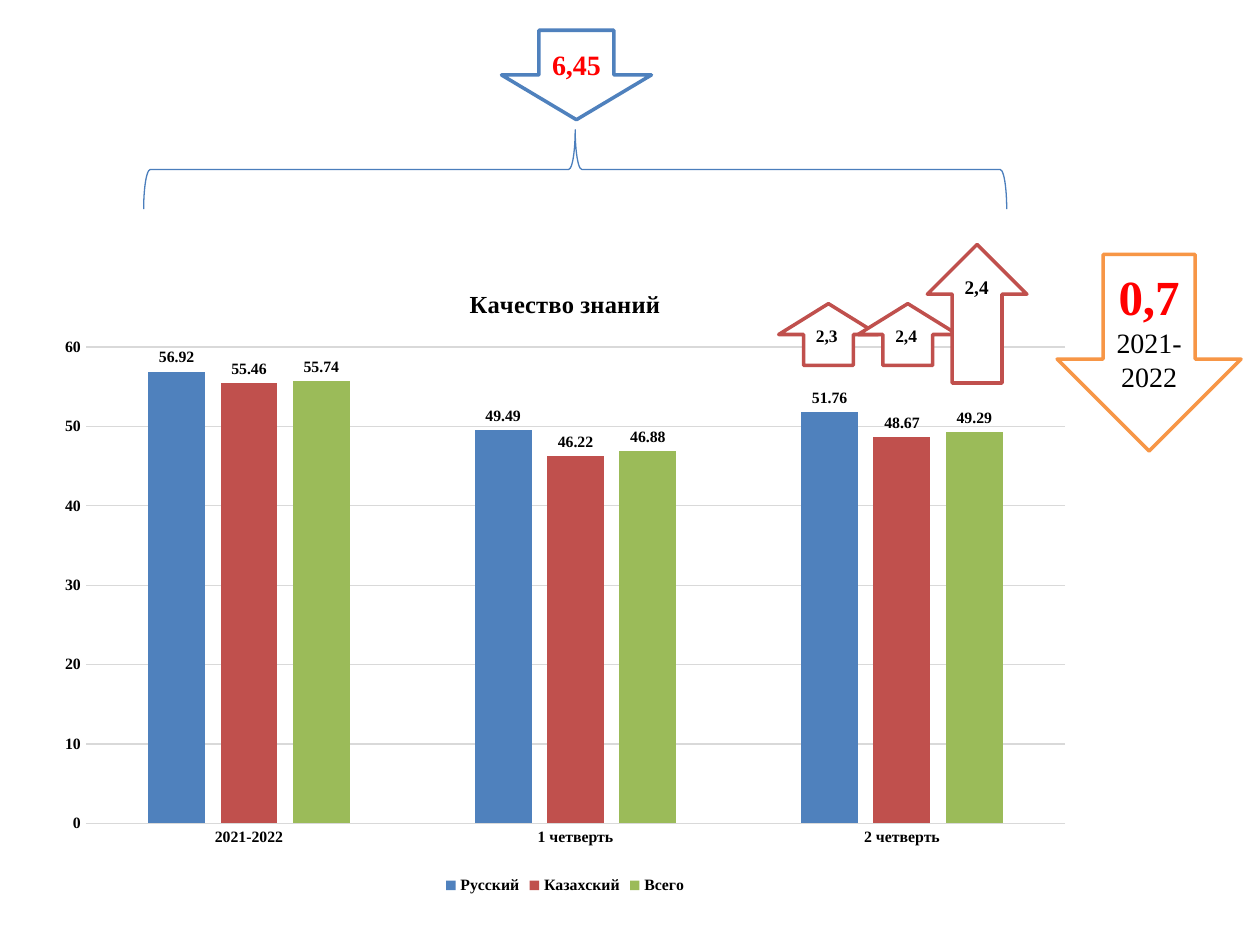
from lxml import etree
from pptx import Presentation, util as u
from pptx.chart import data
from pptx.dml import color
from pptx.enum import chart as ch, shapes, text
from pptx.oxml import ns

FACE = "Times New Roman"
BLUE, RED, GREEN, ORANGE = "4F81BD", "C0504D", "9BBB59", "F79646"
ALERT, BLACK, WHITE, GRAY = "FF0000", "000000", "FFFFFF", "D9D9D9"


def rgb(code):
    return color.RGBColor.from_string(code)


class Board:
    """Holds the text style and the current slide, and draws each kind of element."""

    def __init__(self, slide, face=FACE):
        self.slide = slide
        self.face = face

    def font(self, font, size, tint=BLACK, bold=True):
        font.name = self.face
        font.size = u.Pt(size)
        font.bold = bold
        font.color.rgb = rgb(tint)

    def line(self, line, tint, width):
        line.color.rgb = rgb(tint)
        line.width = u.Pt(width)

    def shape(self, kind, box, tint, width):
        item = self.slide.shapes.add_shape(kind, *map(u.Inches, box))
        item.shadow.inherit = False
        self.line(item.line, tint, width)
        return item

    def arrow(self, kind, box, tint, rows, mid=False):
        item = self.shape(kind, box, tint, 2)
        item.fill.solid()
        item.fill.fore_color.rgb = rgb(WHITE)
        frame = item.text_frame
        frame.word_wrap = True
        frame.vertical_anchor = text.MSO_ANCHOR.MIDDLE if mid else text.MSO_ANCHOR.TOP
        para = frame.paragraphs[0]
        para.alignment = text.PP_ALIGN.CENTER if mid else text.PP_ALIGN.LEFT
        self.font(para.font, *rows[0][1:])
        for spot, (words, *style) in enumerate(rows):
            if spot:
                para.add_line_break()
            run = para.add_run()
            run.text = words
            if len(rows) > 1:
                self.font(run.font, *style)

    def brace(self, box):
        item = self.shape(shapes.MSO_SHAPE.RIGHT_BRACE, box, "4B7EBC", 0.75)
        item.fill.background()
        item.rotation = 270

    def place(self, chart, **parts):
        area = chart.plots[0]._element.getparent()
        for old in area.findall(ns.qn("c:layout")):
            area.remove(old)
        layout = etree.Element(ns.qn("c:layout"))
        manual = etree.SubElement(layout, ns.qn("c:manualLayout"))
        modes = {"layoutTarget": "inner", "xMode": "edge", "yMode": "edge"}
        for name, val in {**modes, **parts}.items():
            etree.SubElement(manual, ns.qn("c:" + name)).set("val", str(val))
        area.insert(0, layout)

    def chart(self, box, title, cats, series):
        feed = data.CategoryChartData()
        feed.categories = cats
        for name, _, vals in series:
            feed.add_series(name, vals)
        kind = ch.XL_CHART_TYPE.COLUMN_CLUSTERED
        chart = self.slide.shapes.add_chart(kind, *map(u.Inches, box), feed).chart
        self.font(chart.font, 10)
        chart.has_title = True
        head = chart.chart_title.text_frame
        head.text = title
        self.font(head.paragraphs[0].font, 14)
        chart.chart_title.include_in_layout = False
        chart.has_legend = True
        chart.legend.position = ch.XL_LEGEND_POSITION.BOTTOM
        chart.legend.include_in_layout = False
        self.font(chart.legend.font, 9)
        for axis in (chart.category_axis, chart.value_axis):
            axis.major_tick_mark = axis.minor_tick_mark = ch.XL_TICK_MARK.NONE
            self.font(axis.tick_labels.font, 9)
        self.line(chart.category_axis.format.line, GRAY, 0.75)
        scale = chart.value_axis
        scale.minimum_scale, scale.maximum_scale, scale.major_unit = 0, 60, 10
        scale.format.line.fill.background()
        self.line(scale.major_gridlines.format.line, GRAY, 0.75)
        plot = chart.plots[0]
        plot.gap_width, plot.overlap = 219, -27
        plot.vary_by_categories = False
        for bars, (_, tint, _) in zip(plot.series, series):
            bars.format.fill.solid()
            bars.format.fill.fore_color.rgb = rgb(tint)
            tags = bars.data_labels
            tags.show_value = True
            tags.position = ch.XL_LABEL_POSITION.OUTSIDE_END
            self.font(tags.font, 9)
        self.place(chart, x=0.04, y=0.13, w=0.94, h=0.75)


def main():
    deck = Presentation()
    deck.slide_width, deck.slide_height = u.Inches(10), u.Inches(7.5)
    board = Board(deck.slides.add_slide(deck.slide_layouts[6]))
    up, down = shapes.MSO_SHAPE.UP_ARROW, shapes.MSO_SHAPE.DOWN_ARROW

    board.chart(
        (0.35, 2.1, 8.27, 5.04),
        "Качество знаний",
        ("2021-2022", "1 четверть", "2 четверть"),
        (
            ("Русский", BLUE, (56.92, 49.49, 51.76)),
            ("Казахский", RED, (55.46, 46.22, 48.67)),
            ("Всего", GREEN, (55.74, 46.88, 49.29)),
        ),
    )
    for left, top, high, words, size in (
        (6.18, 2.41, 0.49, "2,3", 10),
        (6.81, 2.41, 0.49, "2,4", 10),
        (7.36, 1.94, 1.1, "2,4", 11),
    ):
        board.arrow(up, (left, top, 0.79, high), RED, [(words, size)])
    board.brace((4.25, -2.08, 0.63, 6.85))
    board.arrow(down, (3.98, 0.24, 1.19, 0.71), BLUE, [("6,45", 16, ALERT)], mid=True)
    years = [("0,7", 28, ALERT), ("2021-2022", 16, BLACK, False)]
    board.arrow(down, (8.39, 2.02, 1.46, 1.56), ORANGE, years, mid=True)
    deck.save("out.pptx")


if __name__ == "__main__":
    main()
